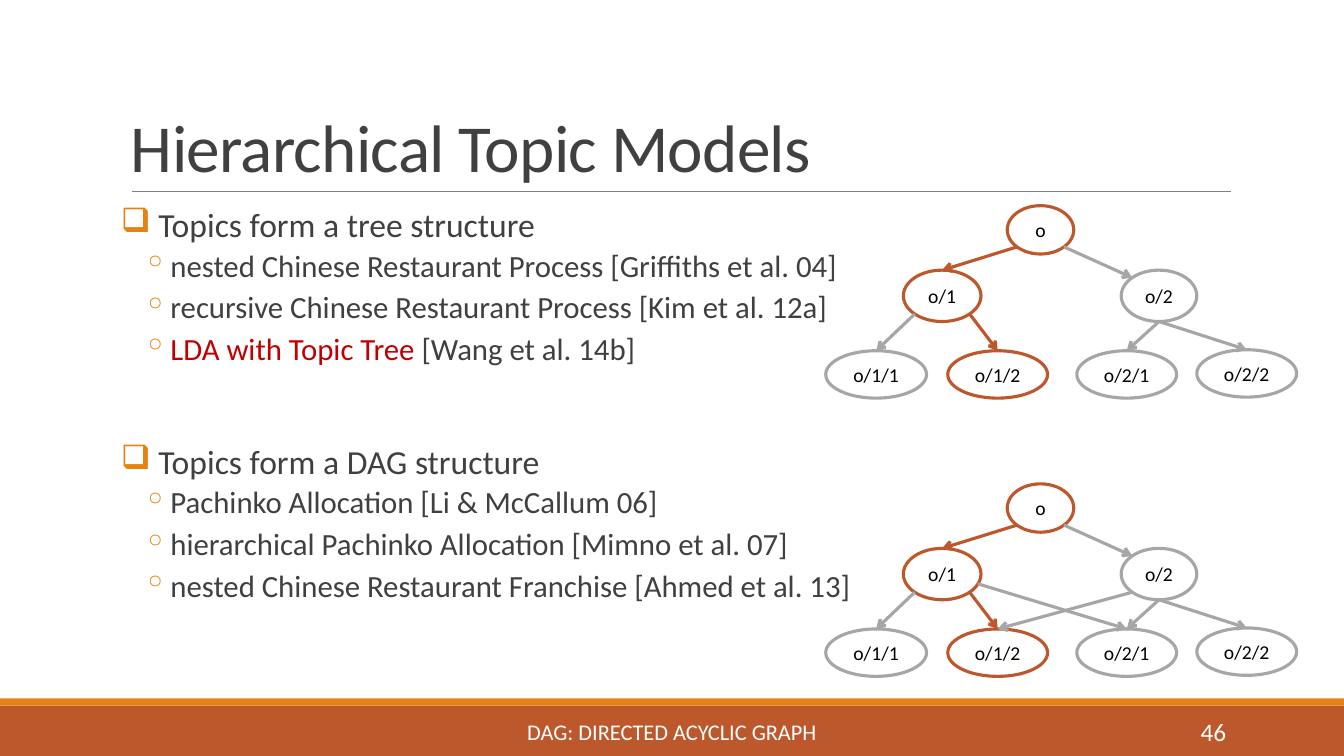
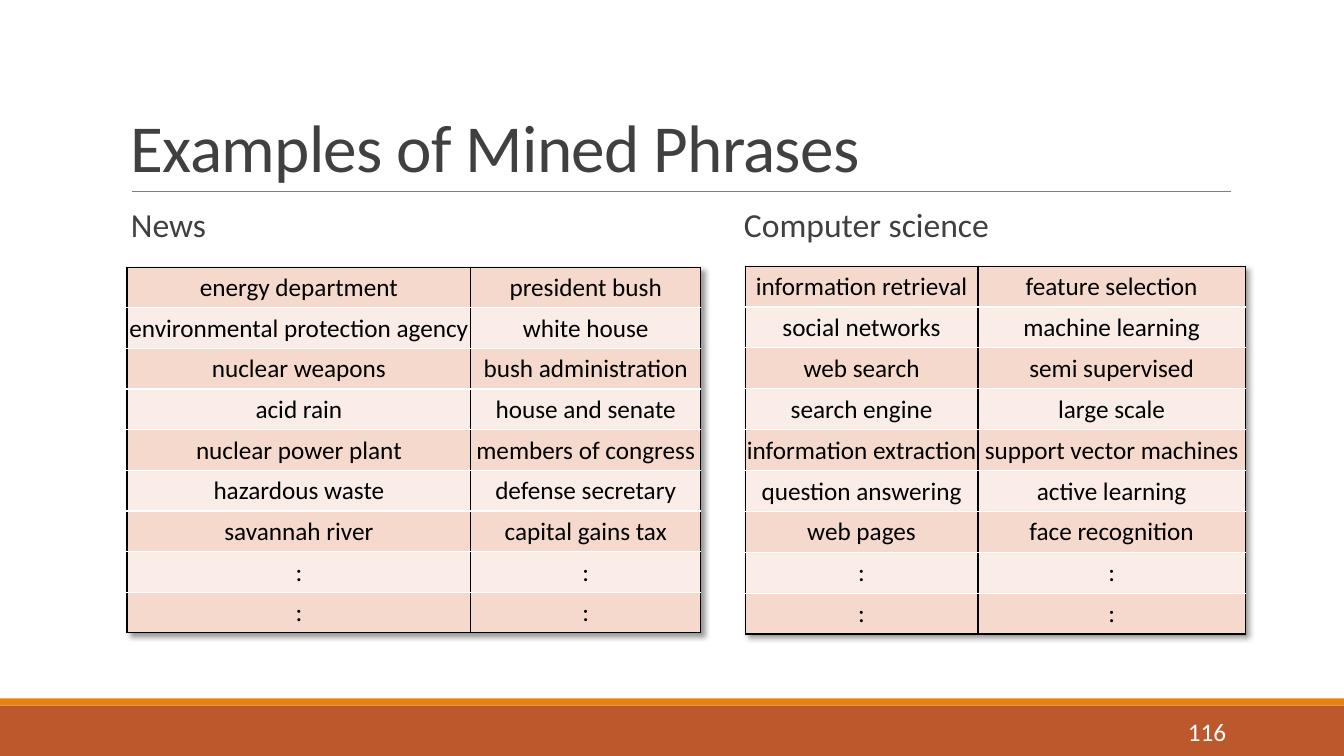
from math import cos, radians, sin

from lxml import etree
from pptx import Presentation
from pptx.dml.color import RGBColor
from pptx.enum.shapes import MSO_CONNECTOR, MSO_SHAPE
from pptx.enum.text import MSO_ANCHOR, PP_ALIGN
from pptx.oxml.ns import qn
from pptx.util import Pt

LEFT, CENTER, RIGHT = PP_ALIGN.LEFT, PP_ALIGN.CENTER, PP_ALIGN.RIGHT
TOP, MIDDLE, BOTTOM = MSO_ANCHOR.TOP, MSO_ANCHOR.MIDDLE, MSO_ANCHOR.BOTTOM
RECTANGLE, OVAL = MSO_SHAPE.RECTANGLE, MSO_SHAPE.OVAL
STRAIGHT = MSO_CONNECTOR.STRAIGHT

FONT = "Calibri"
COLORS = {
    "rust": "BD582C", "orange": "E48312", "rule": "808080", "text": "404040",
    "red": "C00000", "gray": "A6A6A6", "black": "000000", "white": "FFFFFF",
    "row_dark": "F5D9CC", "row_light": "FAEDE7",
}

# Tree nodes: box inside the diagram, outline colour
NODES = {
    "o": ((180, 0, 66, 48), "rust"),
    "o/1": ((77, 64, 77, 51), "rust"),
    "o/2": ((293, 64, 75, 51), "gray"),
    "o/1/1": ((0, 144, 100, 47), "gray"),
    "o/1/2": ((121, 144, 99, 47), "rust"),
    "o/2/1": ((249, 144, 99, 47), "gray"),
    "o/2/2": ((368, 143, 99, 47), "gray"),
}
# Edges: parent, site, child, site, colour; sites count eighths from the top, leftwards
TREE_EDGES = [
    ("o", 3, "o/1", 0, "rust"),
    ("o", 5, "o/2", 1, "gray"),
    ("o/1", 3, "o/1/1", 0, "gray"),
    ("o/1", 5, "o/1/2", 0, "rust"),
    ("o/2", 4, "o/2/1", 0, "gray"),
    ("o/2", 4, "o/2/2", 0, "gray"),
]
DAG_EDGES = TREE_EDGES + [
    ("o/1", 5.5, "o/2/1", 0, "gray"),
    ("o/2", 3, "o/1/2", 0, "gray"),
]

# Bullet groups: heading, items made of (text, colour) spans
TOPIC_GROUPS = [
    ("Topics form a tree structure", [
        [("nested Chinese Restaurant Process [Griffiths et al. 04]", "text")],
        [("recursive Chinese Restaurant Process [Kim et al. 12a]", "text")],
        [("LDA with Topic Tree ", "red"), ("[Wang et al. 14b]", "text")],
    ]),
    ("Topics form a DAG structure", [
        [("Pachinko Allocation [Li & McCallum 06]", "text")],
        [("hierarchical Pachinko Allocation [Mimno et al. 07]", "text")],
        [("nested Chinese Restaurant Franchise [Ahmed et al. 13]", "text")],
    ]),
]

NEWS_PHRASES = [
    ("energy department", "president bush"),
    ("environmental protection agency", "white house"),
    ("nuclear weapons", "bush administration"),
    ("acid rain", "house and senate"),
    ("nuclear power plant", "members of congress"),
    ("hazardous waste", "defense secretary"),
    ("savannah river", "capital gains tax"),
    (":", ":"),
    (":", ":"),
]
SCIENCE_PHRASES = [
    ("information retrieval", "feature selection"),
    ("social networks", "machine learning"),
    ("web search", "semi supervised"),
    ("search engine", "large scale"),
    ("information extraction", "support vector machines"),
    ("question answering", "active learning"),
    ("web pages", "face recognition"),
    (":", ":"),
    (":", ":"),
]


def px(length):
    return round(length * 9144)


def rgb(name):
    return RGBColor.from_string(COLORS[name])


def add_xml(parent, tag, **attributes):
    return etree.SubElement(parent, qn(tag), attributes)


def style(para, size, color, align=LEFT):
    para.alignment = align
    para.font.name, para.font.size = FONT, Pt(size)
    para.font.color.rgb = rgb(color)


def add_text_box(page, box, anchor, side_inset=10):
    frame = page.shapes.add_textbox(*map(px, box)).text_frame
    frame.word_wrap = True
    frame.vertical_anchor = anchor
    frame.margin_left = frame.margin_right = px(side_inset)
    frame.margin_top = frame.margin_bottom = px(5)
    return frame


def add_label(page, box, text, size, color, align, anchor=MIDDLE):
    para = add_text_box(page, box, anchor).paragraphs[0]
    para.text = text
    style(para, size, color, align)
    return para


def add_line(shapes, start, end, color, width):
    line = shapes.add_connector(STRAIGHT, *map(px, (*start, *end)))
    line.line.color.rgb, line.line.width = rgb(color), Pt(width)
    add_xml(line._element.spPr, "a:effectLst")
    return line


# Shared frame: bands, rule, title and page number
def add_page(deck, title, number):
    page = deck.slides.add_slide(deck.slide_layouts[6])
    for top, height, color in ((700, 50, "rust"), (693, 7, "orange")):
        band = page.shapes.add_shape(RECTANGLE, 0, px(top), deck.slide_width, px(height))
        band.shadow.inherit = False
        band.fill.solid()
        band.fill.fore_color.rgb = rgb(color)
        band.line.fill.background()
    add_line(page.shapes, (131, 190), (1221, 190), "rule", 0.5)
    heading = add_label(page, (120, 31, 1100, 159), title, 48, "text", LEFT, BOTTOM)
    heading.line_spacing = 0.85
    heading.font._rPr.set("spc", "-50")
    add_label(page, (1083, 706, 143, 40), number, 18, "white", RIGHT)
    return page


# Bulleted text
def add_bullet(para, char, margin, hang):
    properties = para._p.get_or_add_pPr()
    properties.set("marL", str(px(margin)))
    properties.set("indent", str(-px(hang)))
    color = add_xml(properties, "a:buClr")
    add_xml(color, "a:srgbClr", val=COLORS["orange"])
    add_xml(properties, "a:buChar", char=char)


def add_bullet_groups(page, box, groups):
    frame = add_text_box(page, box, TOP, side_inset=0)
    for index, (heading, items) in enumerate(groups):
        para = frame.add_paragraph() if index else frame.paragraphs[0]
        para.text = heading
        add_bullet(para, "❑", 37, 37)
        style(para, 24, "text")
        para.line_spacing, para.space_after = 0.9, Pt(2)
        para.space_before = Pt(52 if index else 0)
        for spans in items:
            para = frame.add_paragraph()
            add_bullet(para, "◦", 49, 27)
            style(para, 22, "text")
            para.line_spacing = 0.9
            para.space_before, para.space_after = Pt(2), Pt(4)
            for text, color in spans:
                span = para.add_run()
                span.text = text
                if color != "text":
                    span.font.color.rgb = rgb(color)


# Topic diagrams
def site_point(box, site):
    left, top, width, height = box
    angle = radians(45 * site)
    return (left + width / 2 * (1 - sin(angle)),
            top + height / 2 * (1 - cos(angle)))


def add_diagram(page, left, top, edges):
    group = page.shapes.add_group_shape().shapes
    boxes, ovals = {}, {}
    for name, ((x, y, width, height), color) in NODES.items():
        boxes[name] = (left + x, top + y, width, height)
        oval = ovals[name] = group.add_shape(OVAL, *map(px, boxes[name]))
        oval.shadow.inherit = False
        oval.fill.background()
        oval.line.color.rgb, oval.line.width = rgb(color), Pt(2.25)
        frame = oval.text_frame
        frame.word_wrap = False
        frame.vertical_anchor = MIDDLE
        frame.margin_top = frame.margin_bottom = px(6)
        frame.text = name
        style(frame.paragraphs[0], 14, "black", CENTER)
    for parent, parent_site, child, child_site, color in edges:
        arrow = add_line(group, site_point(boxes[parent], parent_site),
                         site_point(boxes[child], child_site), color, 2.25)
        add_xml(arrow.line._get_or_add_ln(), "a:tailEnd", type="arrow")
        links = arrow._element.nvCxnSpPr.cNvCxnSpPr
        for tag, name, site in (("a:stCxn", parent, parent_site),
                                ("a:endCxn", child, child_site)):
            if site == int(site):
                add_xml(links, tag, id=str(ovals[name].shape_id), idx=str(site))


# Phrase tables
def set_borders(cell, colors):
    properties = cell._tc.get_or_add_tcPr()
    for index, (side, color) in enumerate(zip("LRTB", colors)):
        line = etree.Element(qn(f"a:ln{side}"), w=str(Pt(1)))
        add_xml(add_xml(line, "a:solidFill"), "a:srgbClr", val=COLORS[color])
        properties.insert(index, line)


def add_table_shadow(table):
    effects = etree.Element(qn("a:effectLst"))
    shadow = add_xml(effects, "a:outerShdw", blurRad="50800", dist="38100",
                     dir="2700000", algn="tl", rotWithShape="0")
    color = add_xml(shadow, "a:srgbClr", val=COLORS["black"])
    add_xml(color, "a:alpha", val="40000")
    table._tbl.tblPr.insert(0, effects)


def add_phrase_table(page, left, top, widths, height, rows):
    table = page.shapes.add_table(len(rows), len(widths), px(left), px(top),
                                  px(sum(widths)), px(height)).table
    table.first_row = table.horz_banding = False
    add_table_shadow(table)
    for column, width in zip(table.columns, widths):
        column.width = px(width)
    last = len(rows) - 1
    for row_index, phrases in enumerate(rows):
        table.rows[row_index].height = px(height / len(rows))
        for column_index, phrase in enumerate(phrases):
            cell = table.cell(row_index, column_index)
            cell.text = phrase
            style(cell.text_frame.paragraphs[0], 18, "black", CENTER)
            cell.vertical_anchor = MIDDLE
            cell.margin_left = cell.margin_right = cell.margin_top = px(1)
            cell.margin_bottom = 0
            cell.fill.solid()
            cell.fill.fore_color.rgb = rgb("row_light" if row_index % 2 else "row_dark")
            set_borders(cell, ("black", "black",
                               "white" if row_index else "black",
                               "black" if row_index == last else "white"))


def add_column_heading(page, box, text):
    add_label(page, box, text, 24, "text", LEFT, TOP).line_spacing = 0.9


def build_topic_models(deck):
    page = add_page(deck, "Hierarchical Topic Models", "46")
    add_bullet_groups(page, (120, 202, 751, 440), TOPIC_GROUPS)
    add_diagram(page, 819, 204, TREE_EDGES)
    add_diagram(page, 819, 480, DAG_EDGES)
    add_label(page, (403, 706, 527, 40), "DAG: DIRECTED ACYCLIC GRAPH", 16, "white", CENTER)


def build_mined_phrases(deck):
    page = add_page(deck, "Examples of Mined Phrases", "116")
    add_column_heading(page, (120, 202, 540, 440), "News")
    add_column_heading(page, (728, 202, 492, 440), "Computer science")
    add_phrase_table(page, 739, 264, (231, 265), 365, SCIENCE_PHRASES)
    add_phrase_table(page, 126, 265, (341, 228), 363, NEWS_PHRASES)


def main():
    deck = Presentation()
    deck.slide_width, deck.slide_height = px(1333), px(750)
    build_topic_models(deck)
    build_mined_phrases(deck)
    deck.save("out.pptx")


if __name__ == "__main__":
    main()
